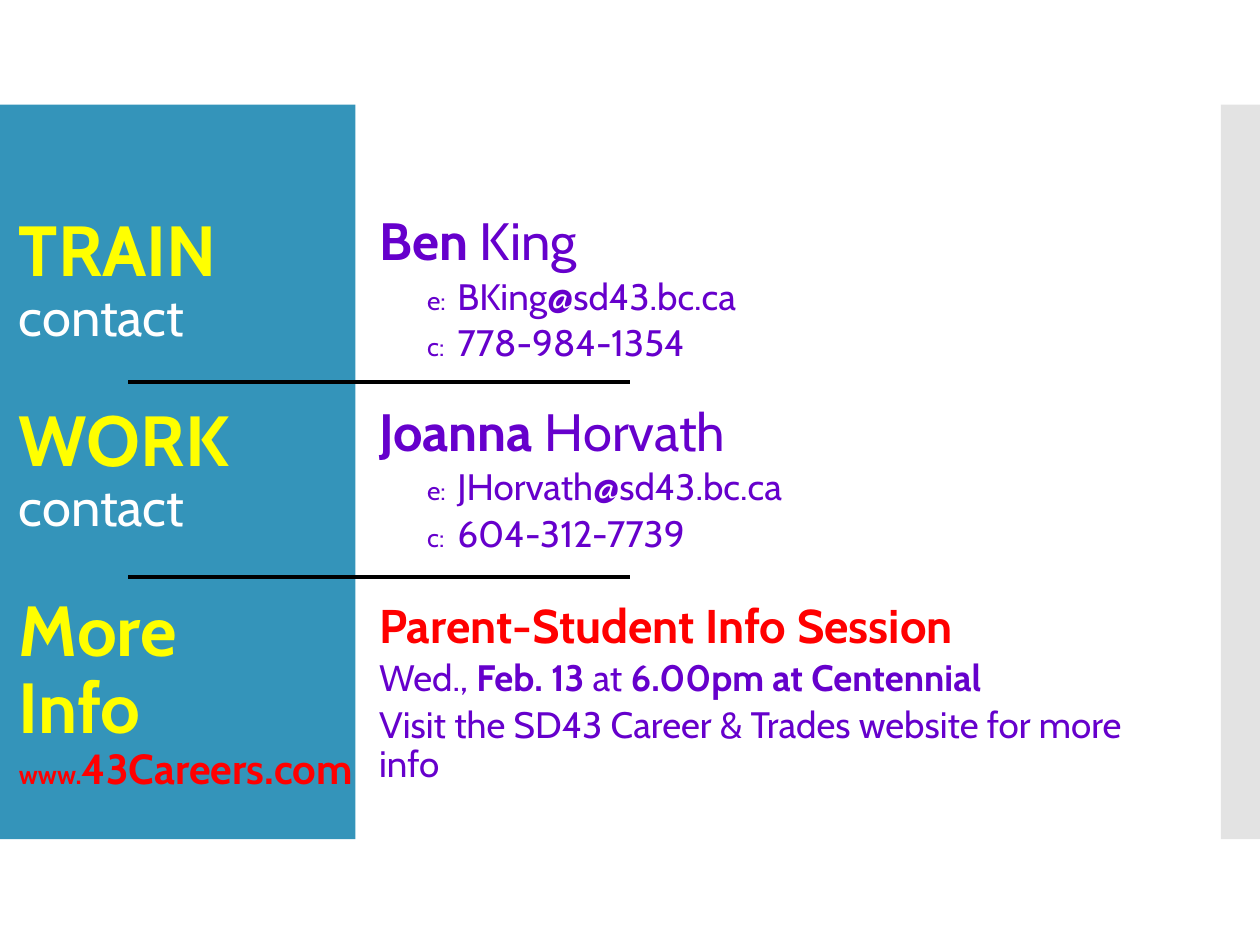
from copy import deepcopy
from dataclasses import dataclass

from lxml import etree
from pptx import Presentation
from pptx.dml.color import RGBColor
from pptx.enum.shapes import MSO_CONNECTOR, MSO_SHAPE
from pptx.enum.text import MSO_ANCHOR, MSO_AUTO_SIZE, PP_ALIGN
from pptx.oxml.ns import qn
from pptx.util import Inches, Pt

RECTANGLE = MSO_SHAPE.RECTANGLE
STRAIGHT = MSO_CONNECTOR.STRAIGHT
TOP, BOTTOM = MSO_ANCHOR.TOP, MSO_ANCHOR.BOTTOM
NO_AUTOFIT = MSO_AUTO_SIZE.NONE
LEFT = PP_ALIGN.LEFT
TITLE_ONLY = 5


@dataclass(frozen=True)
class Theme:
    font: str = "Cabin"
    panel: str = "3494BA"
    strip: str = "C8C8C8"
    heading: str = "FFFF00"
    subheading: str = "FFFFFF"
    body: str = "6600CC"
    accent: str = "FF0000"
    rule: str = "000000"
    heading_size: float = 40.5
    name_size: float = 30
    session_size: float = 27
    site_size: float = 24
    body_size: float = 21
    label_size: float = 15


THEME = Theme()


@dataclass(frozen=True)
class Span:
    text: str
    size: float
    color: str = THEME.body
    bold: bool = False


@dataclass(frozen=True)
class Line:
    spans: tuple[Span, ...]
    before: float = 0
    after: float = 0
    indent: float = 0
    hanging: float = 0


@dataclass(frozen=True)
class Contact:
    first_name: str
    last_name: str
    mailbox: str
    phone: str
    top: float


CONTACTS = (
    Contact("Ben", "King", "BKing", "778-984-1354", 1.67),
    Contact("Joanna", "Horvath", "JHorvath", "604-312-7739", 3.18),
)
RULE_TOPS = (3.03, 4.58)


def heading_line(heading: str, before: float = 0) -> Line:
    return Line((
        Span(f"{heading}\n", THEME.heading_size, THEME.heading, True),
        Span("contact", THEME.name_size, THEME.subheading),
    ), before)


TITLE_LINES = (
    heading_line("TRAIN"),
    heading_line("WORK", 32.5),
    Line((Span("More\nInfo", THEME.heading_size, THEME.heading, True),), 32.5),
    Line((
        Span("www.", THEME.label_size, THEME.accent, True),
        Span("43Careers.com", THEME.site_size, THEME.accent, True),
    )),
)

SESSION_LINES = (
    Line((Span("Parent-Student Info Session", THEME.session_size, THEME.accent, True),), after=3.8),
    Line((
        Span("Wed., ", THEME.body_size),
        Span("Feb. 13 ", THEME.body_size, bold=True),
        Span("at", THEME.body_size),
        Span(" 6.00pm at Centennial", THEME.body_size, bold=True),
    ), after=3.8),
    Line((Span("Visit the SD43 Career & Trades website for more info", THEME.body_size),), after=3.8),
)


def detail_line(label: str, spans: tuple[Span, ...], after: float) -> Line:
    return Line((Span(f"{label}:\t", THEME.label_size), *spans), 0, after, 0.62, -0.24)


def contact_lines(contact: Contact) -> tuple[Line, ...]:
    email = (
        Span(contact.mailbox, THEME.body_size),
        Span("@", THEME.body_size, bold=True),
        Span("sd43.bc.ca", THEME.body_size),
    )
    return (
        Line((
            Span(contact.first_name, THEME.name_size, bold=True),
            Span(f" {contact.last_name}", THEME.name_size),
        ), after=3.8),
        detail_line("e", email, 3.8),
        detail_line("c", (Span(contact.phone, THEME.body_size),), 6),
    )


def apply_format(target, values: dict) -> None:
    for name, value in values.items():
        setattr(target, name, value)


def write_span(paragraph, span: Span) -> None:
    for index, text in enumerate(span.text.split("\n")):
        if index:
            paragraph.add_line_break()
            paragraph._p[-1].append(deepcopy(run._r.rPr))
        if text:
            run = paragraph.add_run()
            run.text = text
            apply_format(run.font, {"name": THEME.font, "size": Pt(span.size), "bold": span.bold})
            run.font.color.rgb = RGBColor.from_string(span.color)


def write_lines(shape, lines: tuple[Line, ...], anchor) -> None:
    frame = shape.text_frame
    apply_format(frame, {
        "word_wrap": True, "auto_size": NO_AUTOFIT, "vertical_anchor": anchor,
        "margin_left": Inches(0.08), "margin_right": Inches(0.08),
        "margin_top": Inches(0.04), "margin_bottom": Inches(0.04),
    })
    for index, line in enumerate(lines):
        paragraph = frame.add_paragraph() if index else frame.paragraphs[0]
        apply_format(paragraph, {
            "alignment": LEFT, "line_spacing": 0.9,
            "space_before": Pt(line.before), "space_after": Pt(line.after),
        })
        properties = paragraph._p.get_or_add_pPr()
        properties.set("marL", str(Inches(line.indent)))
        properties.set("indent", str(Inches(line.hanging)))
        for span in line.spans:
            write_span(paragraph, span)


def add_band(slide, left: float, width: float, color: str):
    shape = slide.shapes.add_shape(RECTANGLE, Inches(left), Inches(0.83), Inches(width), Inches(5.83))
    shape.shadow.inherit = False
    shape.fill.solid()
    shape.fill.fore_color.rgb = RGBColor.from_string(color)
    shape.line.fill.background()
    slide.shapes.title.element.addprevious(shape.element)
    return shape


def add_text(slide, top: float, width: float, height: float, lines: tuple[Line, ...]) -> None:
    shape = slide.shapes.add_textbox(Inches(2.93), Inches(top), Inches(width), Inches(height))
    write_lines(shape, lines, TOP)


def add_rule(slide, top: float) -> None:
    rule = slide.shapes.add_connector(STRAIGHT, Inches(1.02), Inches(top), Inches(5), Inches(top))
    rule.line.color.rgb = RGBColor.from_string(THEME.rule)
    rule.line.width = Pt(2.25)
    etree.SubElement(rule.element.spPr, qn("a:effectLst"))


def main() -> None:
    presentation = Presentation()
    apply_format(presentation, {"slide_width": Inches(10), "slide_height": Inches(7.5)})
    slide = presentation.slides.add_slide(presentation.slide_layouts[TITLE_ONLY])

    add_band(slide, 0, 2.82, THEME.panel)
    strip = add_band(slide, 9.69, 0.31, THEME.strip)
    strip_color = strip.element.spPr.find(f".//{qn('a:srgbClr')}")
    etree.SubElement(strip_color, qn("a:alpha"), val="50000")

    title = slide.shapes.title
    apply_format(title, {
        "left": Inches(0.07), "top": Inches(1.47), "width": Inches(2.93), "height": Inches(4.87),
    })
    write_lines(title, TITLE_LINES, BOTTOM)

    for contact in CONTACTS:
        add_text(slide, contact.top, 4.81, 1.56, contact_lines(contact))
    add_text(slide, 4.74, 6.5, 1.51, SESSION_LINES)
    for top in RULE_TOPS:
        add_rule(slide, top)
    presentation.save("out.pptx")


if __name__ == "__main__":
    main()
